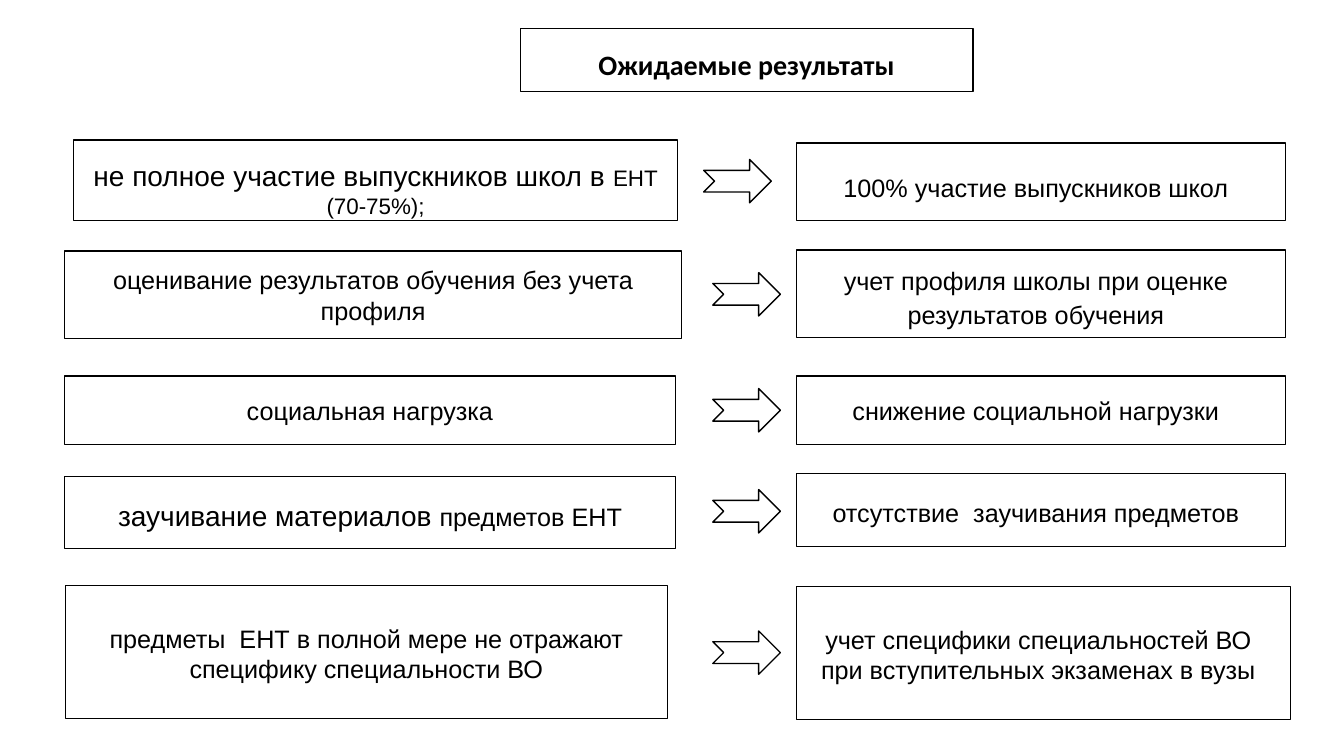
from pptx import Presentation
from pptx.dml.color import RGBColor
from pptx.enum.shapes import MSO_SHAPE as Preset
from pptx.enum.text import MSO_ANCHOR as Anchor, MSO_AUTO_SIZE as AutoSize, PP_ALIGN as Align
from pptx.util import Inches, Pt

COLORS = {"fill": "FFFFFF", "ink": "000000"}
TITLE = "Ожидаемые результаты"
TITLE_BOX = (5.16, 0.28, 4.49, 0.63)
ARROW_SIZE = (0.67, 0.43)

# Each side: box (left, top, width, height), runs (text, size), downward text shift, line spacing
ROWS = [
    {"problem": ((0.73, 1.39, 5.99, 0.8),
                 [("не полное участие выпускников школ в ", 20), ("ЕНТ (70-75%);", 16)], 0.08, 1),
     "arrow_left": 6.98,
     "result": ((7.9, 1.42, 4.85, 0.77), [("100% участие выпускников школ", 18)], 0.05, 1)},
    {"problem": ((0.64, 2.49, 6.12, 0.87),
                 [("оценивание результатов обучения без учета профиля", 18)], 0, 1),
     "arrow_left": 7.07,
     "result": ((7.9, 2.48, 4.85, 0.87),
                [("учет профиля школы при оценке результатов обучения", 18)], 0.02, 1.1)},
    {"problem": ((0.64, 3.73, 6.06, 0.68), [("социальная нагрузка", 18)], 0, 1),
     "arrow_left": 7.07,
     "result": ((7.9, 3.73, 4.85, 0.68), [("снижение социальной нагрузки", 18)], 0, 1)},
    {"problem": ((0.64, 4.73, 6.06, 0.71),
                 [("заучивание материалов ", 20), ("предметов ЕНТ", 18)], 0.03, 1),
     "arrow_left": 7.07,
     "result": ((7.9, 4.7, 4.85, 0.72), [("отсутствие  заучивания предметов", 18)], 0.02, 1)},
    {"problem": ((0.65, 5.81, 5.97, 1.32),
                 [("предметы  ЕНТ в полной мере не отражают специфику специальности ВО", 18)], 0.01, 1),
     "arrow_left": 7.07,
     "result": ((7.9, 5.82, 4.9, 1.32),
                [("учет специфики специальностей ВО при вступительных экзаменах в вузы", 18)], 0.01, 1)},
]


def style_outline(shape):
    shape.shadow.inherit = False
    shape.fill.solid()
    shape.fill.fore_color.rgb = RGBColor.from_string(COLORS["fill"])
    shape.line.color.rgb = RGBColor.from_string(COLORS["ink"])
    shape.line.width = Pt(1)


def style_text(shape, shift, right_inset=0.1):
    """Centre the text, moved down by shift inches."""
    frame = shape.text_frame
    frame.word_wrap = True
    frame.auto_size = AutoSize.NONE
    frame.vertical_anchor = Anchor.MIDDLE
    frame.margin_left, frame.margin_right = Inches(0.1), Inches(right_inset)
    frame.margin_top, frame.margin_bottom = Inches(2 * shift), 0
    frame.paragraphs[0].alignment = Align.CENTER


def style_run(run, font_name, size, bold=False):
    run.font.name = font_name
    run.font.size = Pt(size)
    run.font.bold = bold
    run.font.color.rgb = RGBColor.from_string(COLORS["ink"])


def add_title(slide):
    title = slide.shapes.title
    title.left, title.top, title.width, title.height = map(Inches, TITLE_BOX)
    title.text_frame.text = TITLE
    title.fill.solid()
    title.fill.fore_color.rgb = RGBColor.from_string(COLORS["fill"])
    title.line.color.rgb = RGBColor.from_string(COLORS["ink"])
    title.line.width = Pt(1)
    style_text(title, 0.04)
    style_run(title.text_frame.paragraphs[0].runs[0], "Calibri", 20, bold=True)


def add_box(slide, box, runs, shift, line_spacing, right_inset):
    shape = slide.shapes.add_shape(Preset.RECTANGLE, *map(Inches, box))
    style_outline(shape)
    style_text(shape, shift, right_inset)
    paragraph = shape.text_frame.paragraphs[0]
    paragraph.line_spacing = line_spacing
    for text, size in runs:
        run = paragraph.add_run()
        run.text = text
        style_run(run, "Arial", size)


def add_arrow(slide, left, middle):
    width, height = ARROW_SIZE
    arrow = slide.shapes.add_shape(Preset.NOTCHED_RIGHT_ARROW, Inches(left),
                                   Inches(middle - height / 2), Inches(width), Inches(height))
    style_outline(arrow)


def main():
    presentation = Presentation()
    presentation.slide_width, presentation.slide_height = Inches(13.33), Inches(7.5)
    slide = presentation.slides.add_slide(presentation.slide_layouts[5])
    add_title(slide)
    for row in ROWS:
        add_box(slide, *row["problem"], right_inset=0.1)
        add_box(slide, *row["result"], right_inset=0.2)
        middles = [top + height / 2 for _, top, _, height in (row["problem"][0], row["result"][0])]
        add_arrow(slide, row["arrow_left"], sum(middles) / 2)
    presentation.save("out.pptx")


if __name__ == "__main__":
    main()
